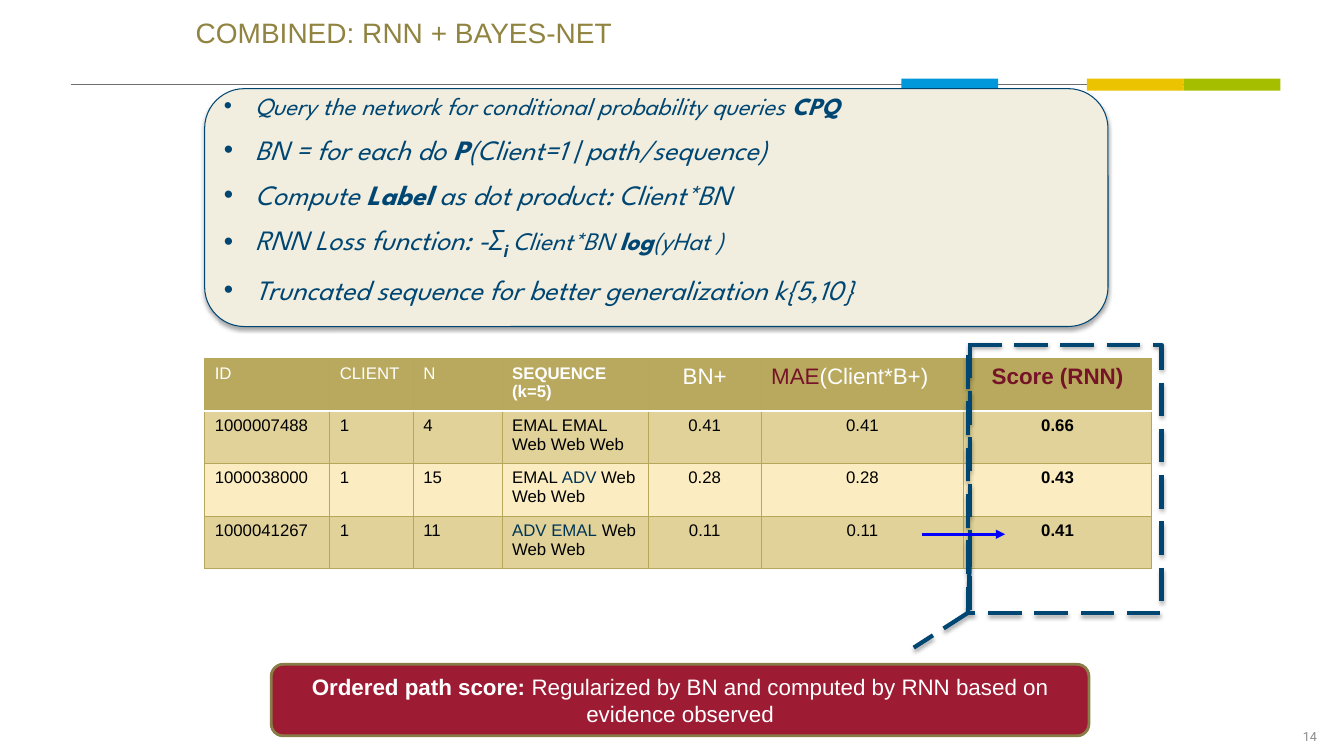
from lxml import etree
from pptx import Presentation
from pptx import util as u
from pptx.dml.color import RGBColor
from pptx.enum import dml, shapes, text
from pptx.oxml import parse_xml
from pptx.oxml.ns import nsdecls, qn

COLORS = {
    "olive": "918340", "navy": "004673", "cream": "F1EEDF", "gray": "8C8C8C",
    "rule": "6C6F70", "lime": "A6BE00", "yellow": "EBC300", "sky": "0098DB",
    "header": "B8A95E", "band": "E0D299", "pale": "FBEDC1", "grid": "B6A75A",
    "white": "FFFFFF", "black": "000000", "wine": "761427", "path": "003556",
    "red": "9E1B34", "bronze": "887D46", "blue": "0000FF",
}

TITLE = "COMBINED: RNN + BAYES-NET"
PAGE = "14"
TABS = [(8.94, "sky"), (10.78, "yellow"), (11.74, "lime")]

# Each bullet is a list of runs: wording, size, and any further font settings
BOLD = {"bold": True}
BULLETS = [
    [("Query the network for conditional probability queries ", 17.6, {}), ("CPQ", 17.6, BOLD)],
    [("BN = for each do ", 20, {}), ("P", 20, BOLD), ("(Client=1 | path/sequence)", 20, {})],
    [("Compute ", 20, {}), ("Label", 20, BOLD), (" as dot product: Client*BN", 20, {})],
    [("RNN Loss function: -", 20, {}), ("Σ", 20, {"font": "Open Sans"}),
     ("i ", 20, {"font": "Open Sans", "bold": True, "baseline": -25000}),
     ("Client*BN ", 18, {}), ("log", 18, BOLD), ("(yHat )", 18, {})],
    [("Truncated sequence for better generalization k{5,10}", 20, {})],
]

COLUMN_WIDTHS = [1.24, 0.83, 0.88, 1.45, 1.12, 2.01, 1.86]
ROW_HEIGHT = 0.52
CENTERED_HEADERS = {4, 6}
CENTERED_VALUES = {4, 5, 6}
HEADERS = [
    [("ID", 12, "white", False)],
    [("CLIENT", 12, "white", False)],
    [("N", 12, "white", False)],
    [("SEQUENCE (k=5)", 12, "white", True)],
    [("BN+", 16, "white", False)],
    [("MAE", 16, "wine", False), ("(Client*B+)", 16, "white", False)],
    [("Score (RNN)", 16, "wine", True)],
]
CLIENTS = [
    ("1000007488", "1", "4", [("EMAL EMAL Web Web Web", "black")], "0.41", "0.41", "0.66"),
    ("1000038000", "1", "15",
     [("EMAL ", "black"), ("ADV ", "path"), ("Web Web Web", "black")], "0.28", "0.28", "0.43"),
    ("1000041267", "1", "11",
     [("ADV EMAL", "path"), (" Web Web Web", "black")], "0.11", "0.11", "0.41"),
]
SUMMARY = [("Ordered path score: ", True),
           ("Regularized by BN and computed by RNN based on evidence observed", False)]


def rgb(color):
    return RGBColor.from_string(COLORS[color])


def add_run(paragraph, words, size, color, font="Arial", bold=False, italic=False, baseline=0):
    run = paragraph.add_run()
    run.text = words
    run.font.size, run.font.name = u.Pt(size), font
    run.font.bold, run.font.italic = bold, italic
    run.font.color.rgb = rgb(color)
    if baseline:
        run.font._element.set("baseline", str(baseline))


def add_box(slide, preset, box, fill=None, line=None, width=1, shadow=False):
    shape = slide.shapes.add_shape(preset, *map(u.Inches, box))
    shape.shadow.inherit = False
    if fill:
        shape.fill.solid()
        shape.fill.fore_color.rgb = rgb(fill)
    else:
        shape.fill.background()
    if line:
        shape.line.color.rgb = rgb(line)
        shape.line.width = u.Pt(width)
    else:
        shape.line.fill.background()
    if shadow:
        shape._element.spPr.find(qn("a:effectLst")).append(parse_xml(
            f'<a:outerShdw {nsdecls("a")} blurRad="39370" dist="22860" dir="5400000" rotWithShape="0">'
            '<a:srgbClr val="000000"><a:alpha val="35000"/></a:srgbClr></a:outerShdw>'))
    return shape


def add_text(slide, box, margin=0):
    frame = slide.shapes.add_textbox(*map(u.Inches, box)).text_frame
    frame.word_wrap = True
    frame.margin_left = frame.margin_right = u.Inches(margin)
    frame.margin_top = frame.margin_bottom = u.Inches(margin / 2)
    return frame


def add_line(slide, start, end, color, width):
    line = slide.shapes.add_connector(
        shapes.MSO_CONNECTOR.STRAIGHT, *map(u.Inches, start + end))
    line.line.color.rgb = rgb(color)
    line.line.width = u.Pt(width)
    etree.SubElement(line._element.spPr, qn("a:effectLst"))
    return line


def add_bullet(paragraph):
    props = paragraph._p.get_or_add_pPr()
    indent = u.Inches(0.31)
    props.set("marL", str(indent))
    props.set("indent", str(-indent))
    for tag, name, value in [("buSzPct", "val", "95000"), ("buFont", "typeface", "Arial"),
                             ("buChar", "char", "•")]:
        etree.SubElement(props, qn(f"a:{tag}")).set(name, value)


def style_cell(cell, fill, bottom):
    """Fill the cell and rule its four sides; bottom is a colour and a width."""
    cell.fill.solid()
    cell.fill.fore_color.rgb = rgb(fill)
    side = ("grid", 0.75)
    top = ("white", 2) if fill == "band" and bottom is None else side
    sides = {"lnL": side, "lnR": side, "lnT": top, "lnB": bottom or side}
    for place, (tag, (color, width)) in enumerate(sides.items()):
        cell._tc.get_or_add_tcPr().insert(place, parse_xml(
            f'<a:{tag} {nsdecls("a")} w="{u.Pt(width)}"><a:solidFill>'
            f'<a:srgbClr val="{COLORS[color]}"/></a:solidFill></a:{tag}>'))


def add_scores(slide):
    rows = [HEADERS]
    for client in CLIENTS:
        cells = [value if isinstance(value, list) else [(value, "black")] for value in client]
        rows.append([[(words, 12, color, column == len(cells) - 1) for words, color in runs]
                     for column, runs in enumerate(cells)])
    table = slide.shapes.add_table(
        len(rows), len(COLUMN_WIDTHS), u.Inches(2.03), u.Inches(3.56),
        u.Inches(sum(COLUMN_WIDTHS)), u.Inches(ROW_HEIGHT * len(rows))).table
    for column, width in zip(table.columns, COLUMN_WIDTHS):
        column.width = u.Inches(width)
    for r, row in enumerate(rows):
        table.rows[r].height = u.Inches(ROW_HEIGHT)
        fill = "header" if r == 0 else ("band" if r % 2 else "pale")
        bottom = ("white", 2) if r == 0 else ("grid", 0.75)
        for c, runs in enumerate(row):
            cell = table.cell(r, c)
            style_cell(cell, fill, None if r == 1 else bottom)
            paragraph = cell.text_frame.paragraphs[0]
            if c in (CENTERED_VALUES if r else CENTERED_HEADERS):
                paragraph.alignment = text.PP_ALIGN.CENTER
            for words, size, color, bold in runs:
                add_run(paragraph, words, size, color, bold=bold)


def main():
    deck = Presentation()
    deck.slide_width, deck.slide_height = u.Inches(13.33), u.Inches(7.5)
    slide = deck.slides.add_slide(deck.slide_layouts[6])
    preset = shapes.MSO_SHAPE

    page = add_text(slide, (10.16, 7.16, 3, 0.3), 0.1)
    page.vertical_anchor = text.MSO_ANCHOR.MIDDLE
    page.paragraphs[0].alignment = text.PP_ALIGN.RIGHT
    add_run(page.paragraphs[0], PAGE, 9, "gray", "Roboto")

    add_line(slide, (0.7, 0.84), (12.67, 0.84), "rule", 1)
    for left, color in TABS:
        add_box(slide, preset.RECTANGLE, (left, 0.78, 0.96, 0.12), color)

    add_box(slide, preset.ROUNDED_RECTANGLE, (2.03, 0.88, 8.96, 2.36),
            "cream", "navy", 0.75, shadow=True)
    title = add_text(slide, (1.94, 0.17, 8.5, 0.33)).paragraphs[0]
    title.line_spacing = 0.97
    add_run(title, TITLE, 20, "olive")

    method = add_text(slide, (2.22, 0.9, 8.66, 2.1))
    for i, runs in enumerate(BULLETS):
        step = method.add_paragraph() if i else method.paragraphs[0]
        step.line_spacing = 1.01
        step.space_before, step.space_after = u.Pt(7.1), u.Pt(0.9)
        add_bullet(step)
        for words, size, style in runs:
            add_run(step, words, size, "navy", italic=True, **{"font": "League Spartan", **style})

    add_scores(slide)

    score_callout = add_box(slide, preset.LINE_CALLOUT_2_BORDER_AND_ACCENT_BAR,
                            (9.6, 3.42, 1.92, 2.66), None, "navy", 3, shadow=True)
    score_callout.line.dash_style = dml.MSO_LINE.LONG_DASH
    for i, value in enumerate([0.81, 0.01, 1, 0, 1.13, -0.28]):
        score_callout.adjustments[i] = value

    summary = add_box(slide, preset.ROUNDED_RECTANGLE, (2.69, 6.59, 8.11, 0.71),
                      "red", "bronze", 2).text_frame
    summary.word_wrap = True
    summary.paragraphs[0].alignment = text.PP_ALIGN.CENTER
    for words, bold in SUMMARY:
        add_run(summary.paragraphs[0], words, 16, "white", bold=bold)

    arrow = add_line(slide, (9.14, 5.3), (9.97, 5.3), "blue", 2.25)
    etree.SubElement(arrow.line._get_or_add_ln(), qn("a:tailEnd")).set("type", "triangle")

    deck.save("out.pptx")


if __name__ == "__main__":
    main()
